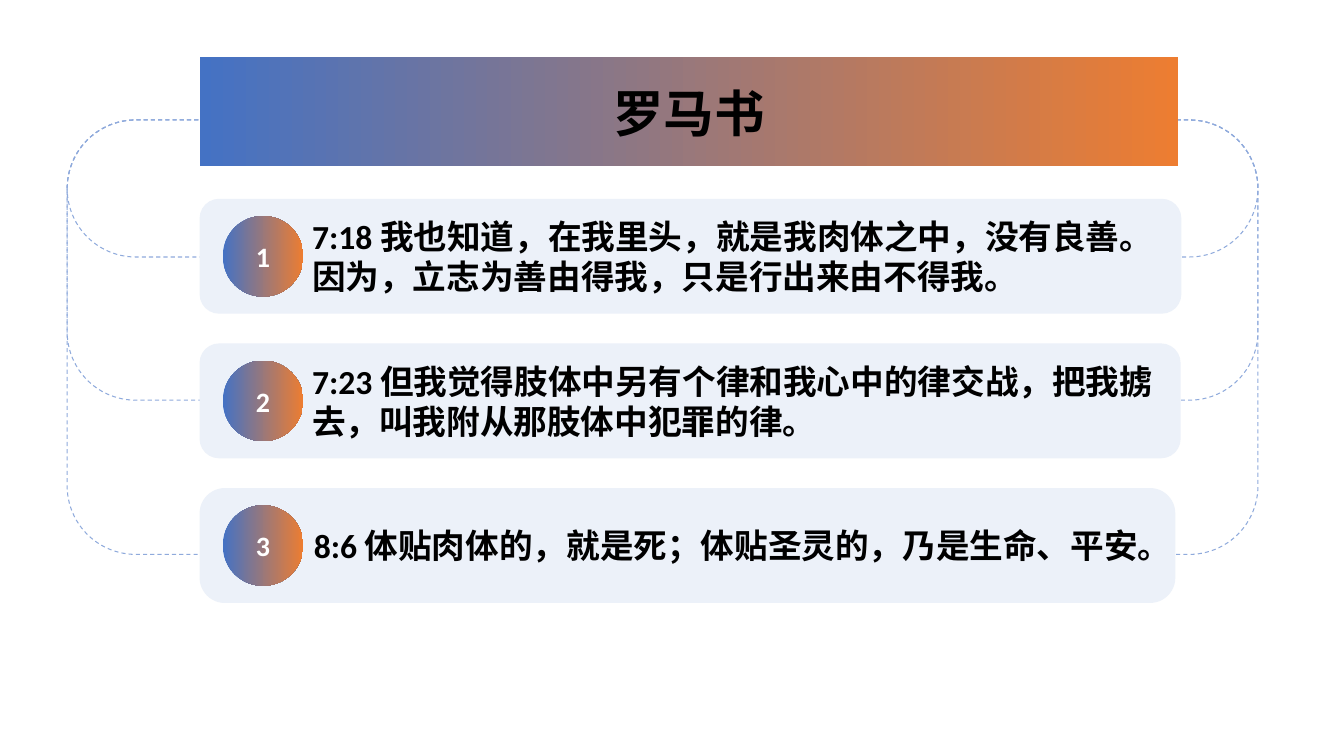
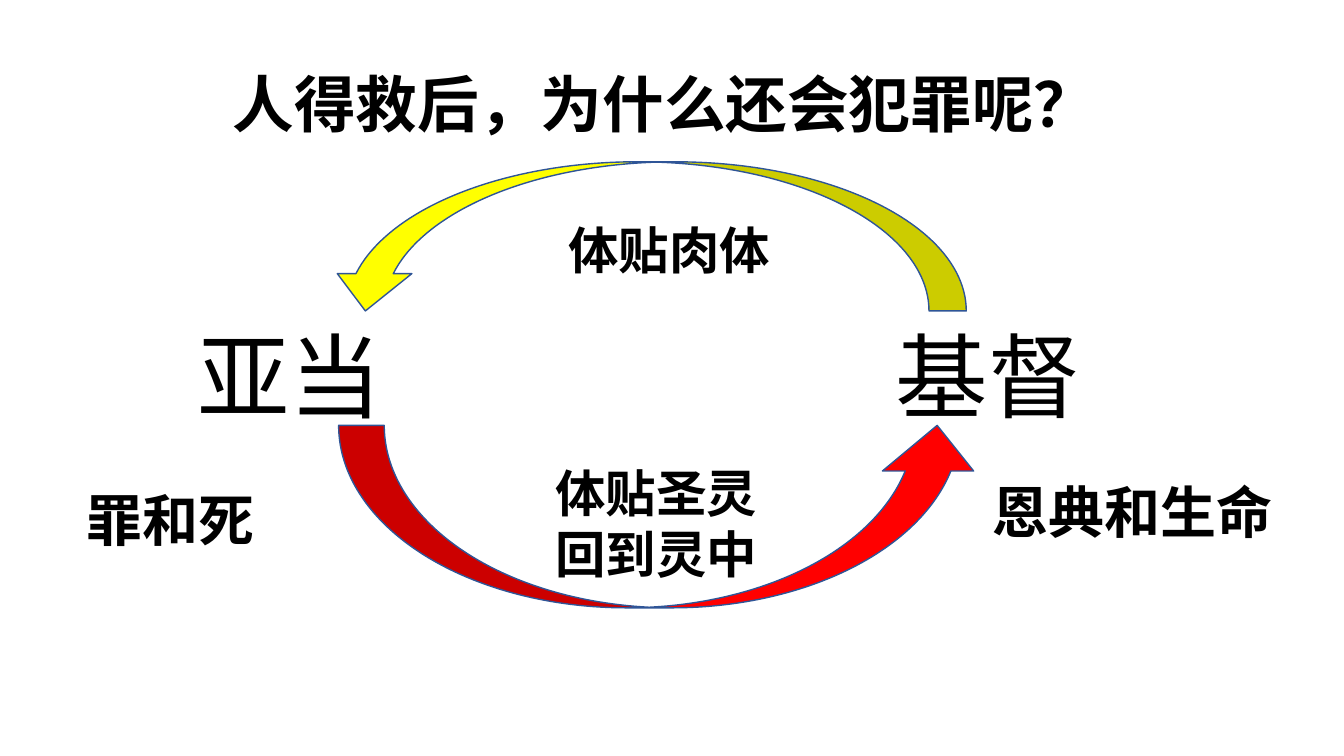
from lxml.etree import SubElement
from pptx import Presentation
from pptx.dml.color import RGBColor
from pptx.enum.dml import MSO_LINE
from pptx.enum.lang import MSO_LANGUAGE_ID
from pptx.enum.shapes import MSO_SHAPE
from pptx.enum.text import MSO_ANCHOR, MSO_AUTO_SIZE, PP_ALIGN
from pptx.oxml import parse_xml
from pptx.oxml.ns import nsdecls, qn
from pptx.util import Inches, Pt

BLACK = RGBColor(0x00, 0x00, 0x00)
WHITE = RGBColor(0xFF, 0xFF, 0xFF)
BLUE = RGBColor(0x44, 0x72, 0xC4)
ORANGE = RGBColor(0xED, 0x7D, 0x31)
RAIL_BLUE = RGBColor(0x8F, 0xAA, 0xDC)
CARD_BLUE = RGBColor(0xEC, 0xF1, 0xF9)
EDGE_BLUE = RGBColor(0x2F, 0x55, 0x97)
RED = RGBColor(0xFF, 0x00, 0x00)
YELLOW = RGBColor(0xFF, 0xFF, 0x00)

presentation = Presentation()
presentation.slide_width = Inches(13.33)
presentation.slide_height = Inches(7.5)
# The grid has 100 columns and 100 rows.
COLUMN = presentation.slide_width / 100
ROW = presentation.slide_height / 100
TITLE_ONLY = presentation.slide_layouts[5]


def box(left, top, width, height):
    """Turn columns and rows of the grid into lengths."""
    return [round(n * unit) for n, unit in zip((left, top, width, height), (COLUMN, ROW) * 2)]


def write(shape, lines, size, name, color=BLACK, bold=True, outlined=False,
          align=PP_ALIGN.LEFT, **frame_format):
    """Fill a shape with one paragraph per line, all in the same style."""
    frame = shape.text_frame
    frame.text = "\n".join(lines)
    for attribute, value in ({"word_wrap": True} | frame_format).items():
        setattr(frame, attribute, value)
    font_format = {"size": Pt(size), "name": name, "bold": bold,
                   "language_id": MSO_LANGUAGE_ID.SIMPLIFIED_CHINESE}
    for paragraph in frame.paragraphs:
        paragraph.alignment = align
        for run in paragraph.runs:
            for attribute, value in font_format.items():
                setattr(run.font, attribute, value)
            run.font.color.rgb = color
            if outlined:
                outline = parse_xml(f'<a:ln {nsdecls("a")} w="{Pt(0.75)}"/>')
                fill = SubElement(outline, qn("a:solidFill"))
                SubElement(fill, qn("a:srgbClr")).set("val", str(WHITE))
                run.font._element.insert(0, outline)


# Slide 1: banner, three verses and the rails that join them
slide = presentation.slides.add_slide(TITLE_ONLY)
RAIL_RADIUS = 9.07
for rail_height in (18.13, 37.07, 57.47):
    rail = slide.shapes.add_shape(MSO_SHAPE.ROUNDED_RECTANGLE, *box(5, 15.87, 88.6, rail_height))
    rail.adjustments[0] = min(0.5, RAIL_RADIUS / rail_height)
    rail.shadow.inherit = False
    rail.fill.background()
    rail.line.color.rgb = RAIL_BLUE
    rail.line.width = Pt(0.75)
    rail.line.dash_style = MSO_LINE.DASH

CARD_LEFT, CARD_TOP, CARD_HEIGHT, CARD_STEP = 14.85, 26.3, 15.2, 19.13
DISC_WIDTH, DISC_HEIGHT = 6, 10.67
VERSES = [
    ("7:18 我也知道，在我里头，就是我肉体之中，没有良善。因为，立志为善由得我，只是行出来由不得我。", 73.05, 0.17),
    ("7:23 但我觉得肢体中另有个律和我心中的律交战，把我掳去，叫我附从那肢体中犯罪的律。", 73, 0.17),
    ("8:6 体贴肉体的，就是死；体贴圣灵的，乃是生命、平安。", 72.6, 0.22),
]
gradient_shapes = []
for index, (verse, card_width, rounding) in enumerate(VERSES):
    top = CARD_TOP + index * CARD_STEP
    card = slide.shapes.add_shape(MSO_SHAPE.ROUNDED_RECTANGLE,
                                  *box(CARD_LEFT, top, card_width, CARD_HEIGHT))
    card.adjustments[0] = rounding
    card.shadow.inherit = False
    card.fill.solid()
    card.fill.fore_color.rgb = CARD_BLUE
    card.line.fill.background()
    write(card, [verse], 24, "Calibri", vertical_anchor=MSO_ANCHOR.MIDDLE,
          margin_left=Inches(1.06))

    disc = slide.shapes.add_shape(
        MSO_SHAPE.OVAL,
        *box(16.57, top + (CARD_HEIGHT - DISC_HEIGHT) / 2, DISC_WIDTH, DISC_HEIGHT))
    disc.shadow.inherit = False
    write(disc, [str(index + 1)], 20, "Calibri", WHITE, align=PP_ALIGN.CENTER,
          vertical_anchor=MSO_ANCHOR.MIDDLE, word_wrap=False)
    gradient_shapes.append(disc)

banner = slide.shapes.title
banner.left, banner.top, banner.width, banner.height = box(CARD_LEFT, 7.6, 72.83, 14.4)
banner.element.spPr.append(
    parse_xml(f'<a:prstGeom {nsdecls("a")} prst="roundRect"><a:avLst/></a:prstGeom>'))
write(banner, ["罗马书"], 36, "Calibri", outlined=True, align=PP_ALIGN.CENTER,
      vertical_anchor=MSO_ANCHOR.MIDDLE, auto_size=MSO_AUTO_SIZE.NONE)
banner.element.getparent().append(banner.element)  # in front of the rails
gradient_shapes.append(banner)

for shape in gradient_shapes:
    shape.fill.gradient()
    shape.fill.gradient_angle = 0
    for stop, color in zip(shape.fill.gradient_stops, (BLUE, ORANGE)):
        stop.color.rgb = color
    shape.line.fill.background()

# Slide 2: the cycle between Adam and Christ
slide = presentation.slides.add_slide(TITLE_ONLY)
title = slide.shapes.title
title.left, title.top, title.width, title.height = box(16.57, 8, 66.9, 11.2)
write(title, ["人得救后，为什么还会犯罪呢？"], 44, "Arial", outlined=True,
      vertical_anchor=MSO_ANCHOR.TOP, auto_size=MSO_AUTO_SIZE.NONE)

LABELS = [
    (["亚当"], 66, False, (13.95, 41.6, 18.38, 16.13)),
    (["基督"], 66, False, (65.93, 41.6, 20.48, 16.13)),
    (["罪和死"], 40, True, (5.7, 63.6, 16.8, 10.27)),
    (["恩典和生命"], 40, True, (73.13, 62.53, 26.33, 10.27)),
    (["体贴圣灵", "回到灵中"], 36, True, (40.58, 60.53, 34.28, 17.47)),
    (["体贴肉体"], 36, True, (41.55, 28.27, 18.98, 9.47)),
]
for lines, size, bold, place in LABELS:
    label = slide.shapes.add_textbox(*box(*place))
    write(label, lines, size, "Arial", bold=bold, outlined=True,
          auto_size=MSO_AUTO_SIZE.SHAPE_TO_FIT_TEXT)

ARROWS = [
    (MSO_SHAPE.CURVED_UP_ARROW, RED, 0, (25.2, 56.27, 47.93, 24.13)),
    (MSO_SHAPE.CURVED_RIGHT_ARROW, YELLOW, 90, (42.6, -10.93, 11.1, 84.4)),
]
for kind, color, rotation, place in ARROWS:
    arrow = slide.shapes.add_shape(kind, *box(*place))
    arrow.rotation = rotation
    arrow.shadow.inherit = False
    arrow.fill.solid()
    arrow.fill.fore_color.rgb = color
    arrow.line.color.rgb = EDGE_BLUE
    arrow.line.width = Pt(1)

presentation.save("out.pptx")
